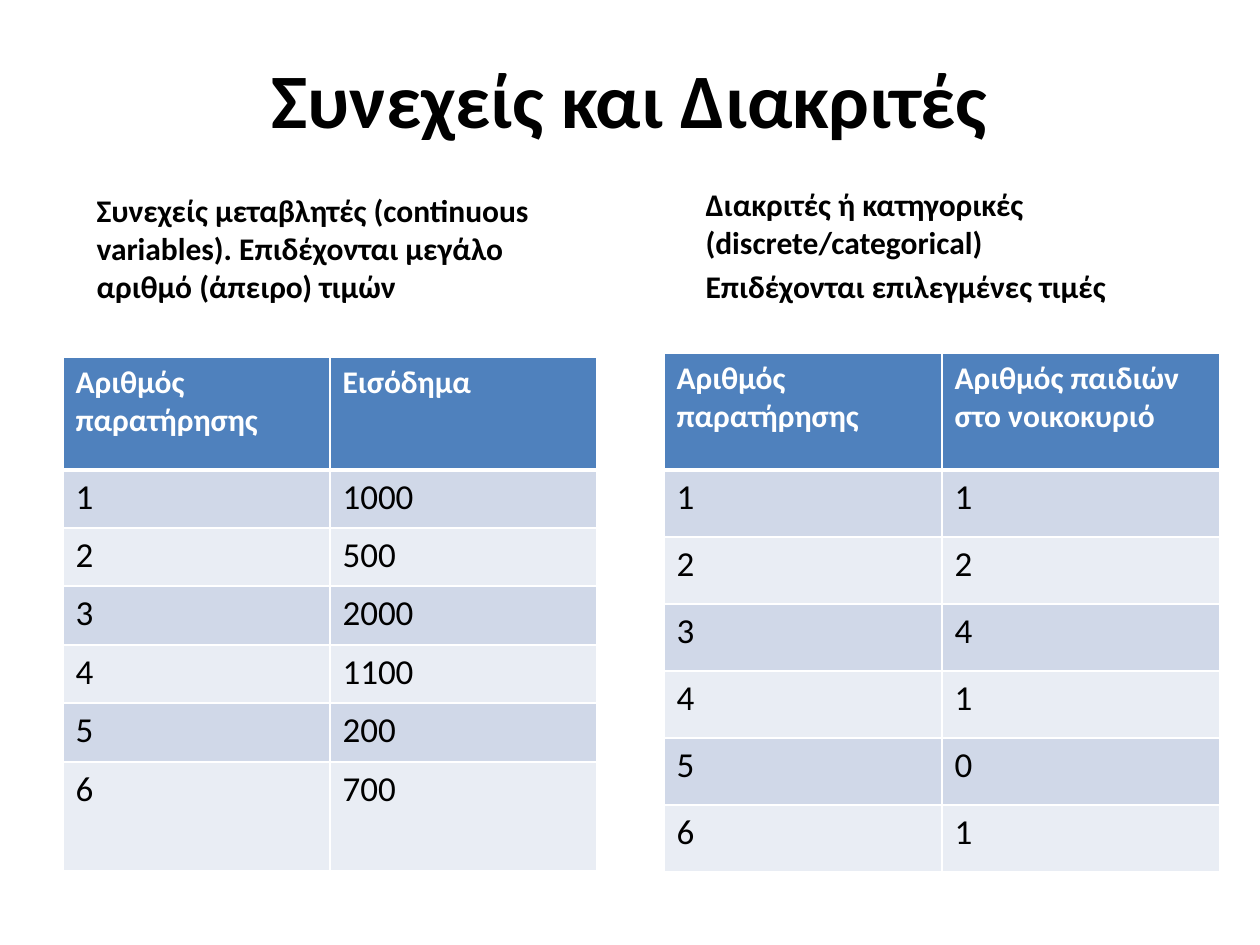
"""Build a slide comparing continuous and discrete variables."""
from dataclasses import dataclass

from lxml import etree
from pptx import Presentation
from pptx.dml.color import RGBColor
from pptx.enum.text import MSO_ANCHOR, MSO_AUTO_SIZE, PP_ALIGN
from pptx.oxml.ns import qn
from pptx.util import Emu, Pt

PIXEL = 914400 / 126
FONT = "Calibri"
BOTTOM, MIDDLE = MSO_ANCHOR.BOTTOM, MSO_ANCHOR.MIDDLE
LEFT, CENTER = PP_ALIGN.LEFT, PP_ALIGN.CENTER
NO_AUTOFIT = MSO_AUTO_SIZE.NONE
COLORS = {
    "text": "000000",
    "header": "4F81BD",
    "header_text": "FFFFFF",
    "border": "FFFFFF",
    "odd_row": "D0D8E8",
    "even_row": "E9EDF4",
}
COMPARISON_LAYOUT = 4


@dataclass(frozen=True)
class Box:
    left: int
    top: int
    width: int
    height: int


@dataclass(frozen=True)
class Panel:
    placeholder: int
    heading_box: Box
    heading: tuple[str, ...]
    table_left: int
    table_top: int
    column_width: int
    row_heights: tuple[int, ...]
    header: tuple[str, str]
    values: tuple[int, ...]


TITLE = "Συνεχείς και Διακριτές"
TITLE_BOX = Box(63, 38, 1134, 120)
PANELS = (
    Panel(
        1, Box(84, 210, 462, 101),
        ("Συνεχείς μεταβλητές (continuous variables). "
         "Επιδέχονται μεγάλο αριθμό (άπειρο) τιμών",),
        63, 357, 267, (113, 58, 58, 59, 58, 59, 109),
        ("Αριθμός παρατήρησης", "Eισόδημα"),
        (1000, 500, 2000, 1100, 200, 700),
    ),
    Panel(
        3, Box(693, 210, 483, 101),
        ("Διακριτές ή κατηγορικές (discrete/categorical)",
         "Επιδέχονται επιλεγμένες τιμές"),
        664, 353, 278, (117,) + (67,) * 6,
        ("Αριθμός παρατήρησης", "Αριθμός παιδιών στο νοικοκυριό"),
        (1, 2, 4, 1, 0, 1),
    ),
)


def px(value: int) -> Emu:
    return Emu(round(value * PIXEL))


def add_text(paragraph, text: str, size: int, color: str, bold: bool) -> None:
    run = paragraph.add_run()
    run.text = text
    run.font.name = FONT
    run.font.size = Pt(size)
    run.font.bold = bold
    run.font.color.rgb = RGBColor.from_string(COLORS[color])


def fill_placeholder(shape, box: Box, lines: tuple[str, ...], size: int,
                     alignment, anchor) -> None:
    shape.left, shape.top = px(box.left), px(box.top)
    shape.width, shape.height = px(box.width), px(box.height)
    frame = shape.text_frame
    frame.word_wrap = True
    frame.auto_size = NO_AUTOFIT
    frame.vertical_anchor = anchor
    for index, line in enumerate(lines):
        paragraph = frame.add_paragraph() if index else frame.paragraphs[0]
        paragraph.alignment = alignment
        paragraph.space_before = Pt(3.6 if index else 0)
        add_text(paragraph, line, size, "text", True)


def set_borders(cell, top: int, bottom: int) -> None:
    properties = cell._tc.get_or_add_tcPr()
    for side, width in (("L", 1), ("R", 1), ("T", top), ("B", bottom)):
        line = etree.SubElement(properties, qn(f"a:ln{side}"), w=str(Pt(width)))
        fill = etree.SubElement(line, qn("a:solidFill"))
        etree.SubElement(fill, qn("a:srgbClr"), val=COLORS["border"])


def add_panel_table(slide, panel: Panel) -> None:
    rows = [panel.header]
    rows += [(str(number), str(value)) for number, value in enumerate(panel.values, 1)]
    columns = len(panel.header)
    table = slide.shapes.add_table(
        len(rows), columns, px(panel.table_left), px(panel.table_top),
        px(columns * panel.column_width), px(sum(panel.row_heights)),
    ).table
    for column in table.columns:
        column.width = px(panel.column_width)
    for row_index, texts in enumerate(rows):
        table.rows[row_index].height = px(panel.row_heights[row_index])
        is_header = row_index == 0
        band = "header" if is_header else "odd_row" if row_index % 2 else "even_row"
        for column_index, text in enumerate(texts):
            cell = table.cell(row_index, column_index)
            set_borders(cell, 3 if row_index == 1 else 1, 3 if is_header else 1)
            cell.fill.solid()
            cell.fill.fore_color.rgb = RGBColor.from_string(COLORS[band])
            add_text(cell.text_frame.paragraphs[0], text, 18 if is_header else 20,
                     "header_text" if is_header else "text", is_header)


def main() -> None:
    presentation = Presentation()
    presentation.slide_width, presentation.slide_height = px(1260), px(945)
    slide = presentation.slides.add_slide(presentation.slide_layouts[COMPARISON_LAYOUT])
    fill_placeholder(slide.shapes.title, TITLE_BOX, (TITLE,), 44, CENTER, MIDDLE)
    placeholders = {shape.placeholder_format.idx: shape for shape in slide.placeholders}
    for panel in PANELS:
        fill_placeholder(placeholders[panel.placeholder], panel.heading_box,
                         panel.heading, 18, LEFT, BOTTOM)
        add_panel_table(slide, panel)
    for shape in placeholders.values():
        if not shape.text_frame.text:
            shape.element.getparent().remove(shape.element)
    presentation.save("out.pptx")


if __name__ == "__main__":
    main()
